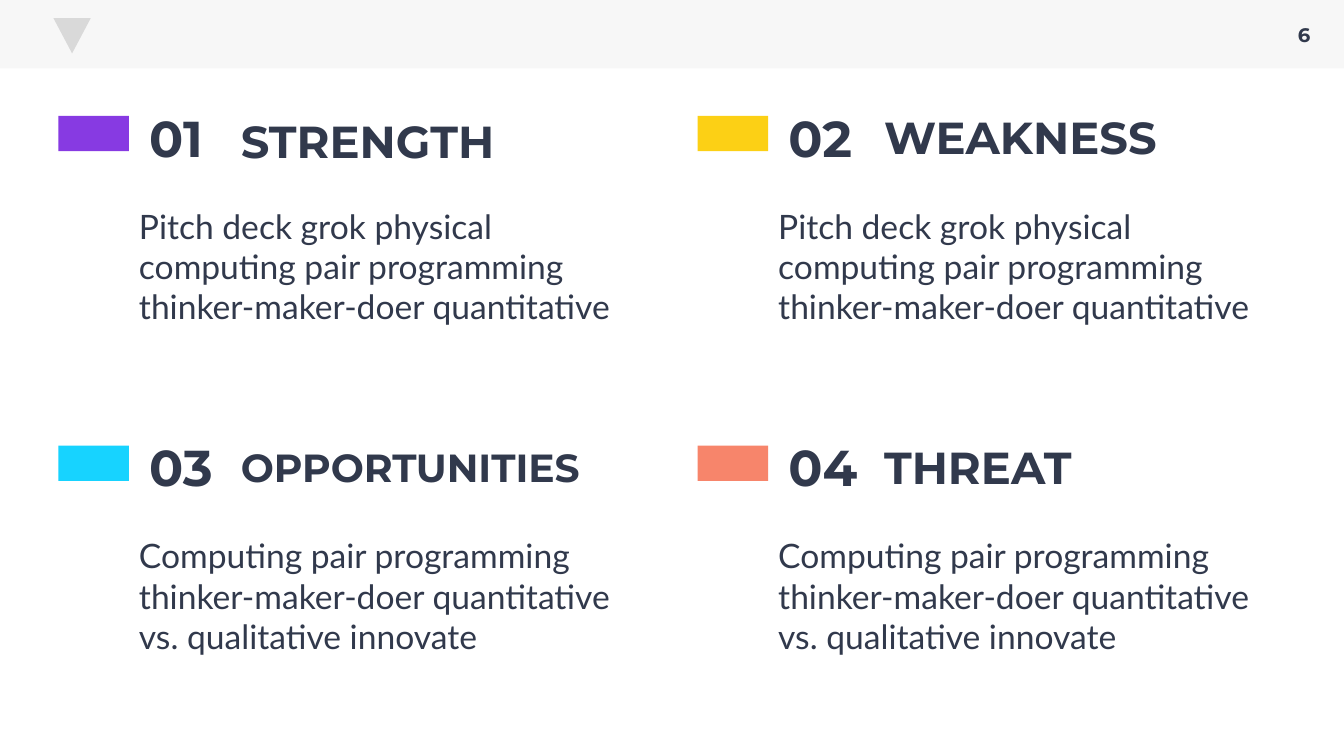
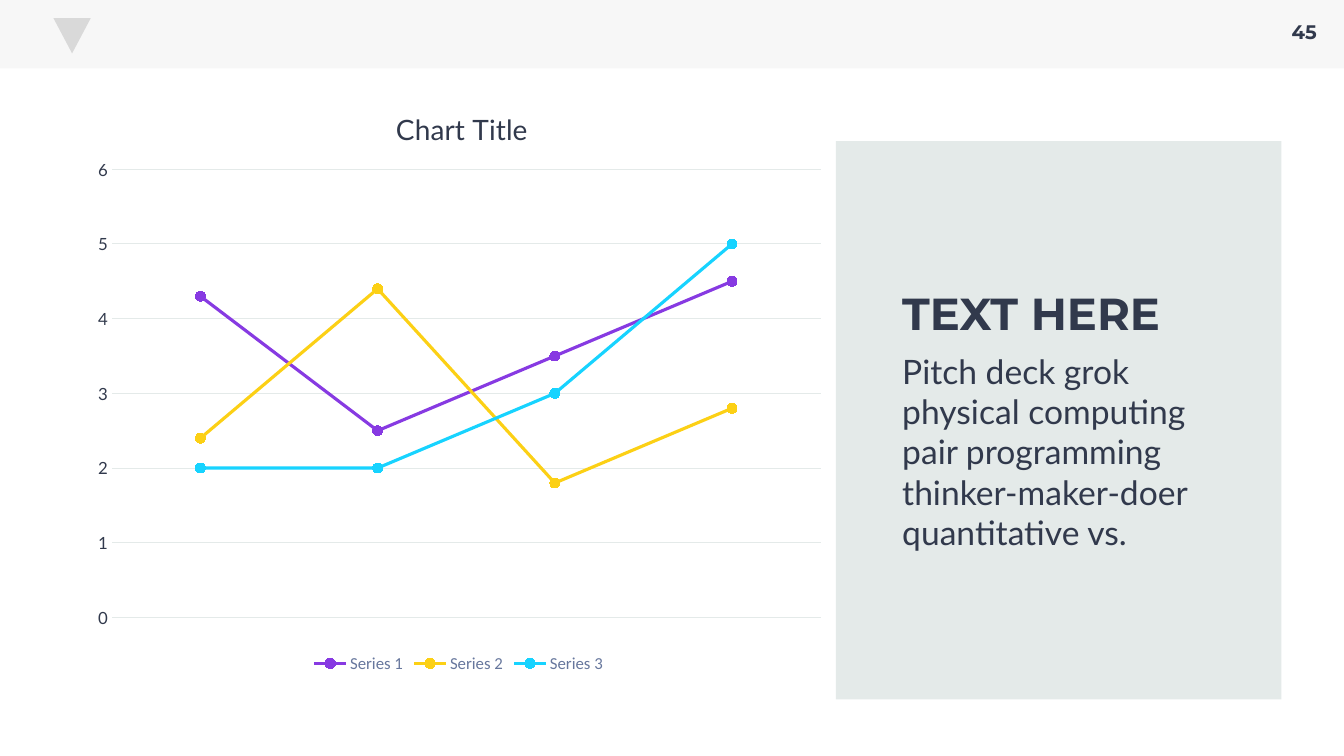
from dataclasses import dataclass

from lxml.etree import SubElement
from pptx import Presentation
from pptx.chart.data import CategoryChartData
from pptx.dml.color import RGBColor
from pptx.enum.chart import XL_CHART_TYPE, XL_LEGEND_POSITION, XL_MARKER_STYLE, XL_TICK_MARK
from pptx.enum.shapes import MSO_SHAPE
from pptx.enum.text import PP_ALIGN
from pptx.oxml.ns import qn
from pptx.util import Inches, Pt

# Shared style
NAVY = RGBColor(0x31, 0x39, 0x4C)
SLATE = RGBColor(0x67, 0x77, 0x9D)
BAND = RGBColor(0xF7, 0xF7, 0xF7)
EMBLEM = RGBColor(0xD9, 0xD9, 0xD9)
MIST = RGBColor(0xE4, 0xEA, 0xE9)
PURPLE = RGBColor(0x87, 0x3A, 0xE2)
YELLOW = RGBColor(0xFC, 0xD0, 0x15)
CYAN = RGBColor(0x17, 0xD3, 0xFF)
CORAL = RGBColor(0xF7, 0x85, 0x6B)
HEADING_FONT = "Montserrat"
BODY_FONT = "Lato"
LEGEND_FONT = "Calibri"


@dataclass(frozen=True)
class Column:
    left: float
    heading_dx: float
    heading_dy: float


@dataclass(frozen=True)
class Topic:
    number: str
    heading: str
    body: str
    color: RGBColor
    size: int = 32


@dataclass(frozen=True)
class Series:
    name: str
    values: tuple[float, ...]
    color: RGBColor


# Slide content
COLUMNS = (Column(0.58, 1.71, -0.07), Column(6.92, 1.75, -0.11))
ROW_TOPS = (1.15, 4.42)
PITCH = "Pitch deck grok physical computing pair programming thinker-maker-doer quantitative"
COMPUTING = ("Computing pair programming thinker-maker-doer quantitative "
             "vs. qualitative innovate")
TOPICS = (
    Topic("01", "STRENGTH", PITCH, PURPLE),
    Topic("02", "WEAKNESS", PITCH, YELLOW),
    Topic("03", "OPPORTUNITIES", COMPUTING, CYAN, size=28),
    Topic("04", "THREAT", COMPUTING, CORAL),
)
CATEGORIES = ("1", "2", "3", "4")
SERIES = (
    Series("Series 1", (4.3, 2.5, 3.5, 4.5), PURPLE),
    Series("Series 2", (2.4, 4.4, 1.8, 2.8), YELLOW),
    Series("Series 3", (2, 2, 3, 5), CYAN),
)


def style_font(font, name: str, size: float, color: RGBColor, bold: bool = False) -> None:
    font.name = name
    font.size = Pt(size)
    font.bold = bold
    font.color.rgb = color


def add_text(page, text: str, left: float, top: float, width: float, height: float, *,
             font: str = BODY_FONT, size: float = 24, bold: bool = False,
             color: RGBColor = NAVY, align: PP_ALIGN = PP_ALIGN.LEFT) -> None:
    box = page.shapes.add_textbox(Inches(left), Inches(top), Inches(width), Inches(height))
    box.text_frame.word_wrap = True
    para = box.text_frame.paragraphs[0]
    para.alignment = align
    span = para.add_run()
    span.text = text
    style_font(span.font, font, size, color, bold)


def add_heading(page, text: str, left: float, top: float, width: float, height: float,
                size: float = 32, align: PP_ALIGN = PP_ALIGN.LEFT) -> None:
    add_text(page, text, left, top, width, height,
             font=HEADING_FONT, size=size, bold=True, align=align)


def add_block(page, left: float, top: float, width: float, height: float,
              color: RGBColor, kind: MSO_SHAPE = MSO_SHAPE.RECTANGLE):
    block = page.shapes.add_shape(kind, Inches(left), Inches(top),
                                  Inches(width), Inches(height))
    block.shadow.inherit = False
    block.fill.solid()
    block.fill.fore_color.rgb = color
    block.line.fill.background()
    return block


def add_page(deck, number: str, number_top: float):
    """Add a blank page with the header band, emblem and page number."""
    page = deck.slides.add_slide(deck.slide_layouts[6])
    add_block(page, 0, 0, 13.33, 0.68, BAND)
    emblem = add_block(page, 0.53, 0.18, 0.37, 0.35, EMBLEM, MSO_SHAPE.ISOSCELES_TRIANGLE)
    emblem.rotation = 180
    add_heading(page, number, 12.7, number_top, 0.47, 0.29, size=14, align=PP_ALIGN.CENTER)
    return page


def add_topic(page, topic: Topic, column: Column, top: float) -> None:
    left = column.left
    add_block(page, left, top, 0.7, 0.35, topic.color)
    add_heading(page, topic.number, left + 0.8, top - 0.14, 1.15, 0.71, size=36)
    add_heading(page, topic.heading, left + column.heading_dx, top + column.heading_dy,
                3.69, 0.64, size=topic.size)
    add_text(page, topic.body, left + 0.7, top + 0.84, 5.19, 1.31)


def place_chart_part(part, index: int, **settings: str | float) -> None:
    """Give a chart part a manual layout, in fractions of the chart."""
    for old in part.findall(qn("c:layout")):
        part.remove(old)
    layout = SubElement(part, qn("c:layout"))
    part.insert(index, layout)
    manual = SubElement(layout, qn("c:manualLayout"))
    for name, value in settings.items():
        SubElement(manual, qn(f"c:{name}")).set("val", str(value))


def add_line_chart(page) -> None:
    data = CategoryChartData()
    data.categories = CATEGORIES
    for entry in SERIES:
        data.add_series(entry.name, entry.values)
    chart = page.shapes.add_chart(XL_CHART_TYPE.LINE_MARKERS, Inches(0.81), Inches(0.79),
                                  Inches(7.48), Inches(5.93), data).chart
    style_font(chart.font, LEGEND_FONT, 10, NAVY)

    # Title and legend
    chart.has_title = True
    title = chart.chart_title
    title.include_in_layout = False
    span = title.text_frame.paragraphs[0].add_run()
    span.text = "Chart Title"
    style_font(span.font, BODY_FONT, 20, NAVY)
    chart.has_legend = True
    chart.legend.position = XL_LEGEND_POSITION.BOTTOM
    chart.legend.include_in_layout = False
    style_font(chart.legend.font, LEGEND_FONT, 12, SLATE)

    # Axes
    chart.category_axis.visible = False
    axis = chart.value_axis
    axis.minimum_scale, axis.maximum_scale, axis.major_unit = 0, 6, 1
    axis.major_tick_mark = axis.minor_tick_mark = XL_TICK_MARK.NONE
    axis.format.line.fill.background()
    style_font(axis.tick_labels.font, BODY_FONT, 12, NAVY)
    axis.has_major_gridlines = True
    grid = axis.major_gridlines.format.line
    grid.color.rgb = MIST
    grid.width = Pt(0.75)

    # Series
    plot = chart.plots[0]
    plot.vary_by_categories = False
    for line, entry in zip(plot.series, SERIES):
        line.smooth = False
        line.format.line.color.rgb = entry.color
        line.format.line.width = Pt(2.25)
        marker = line.marker
        marker.style = XL_MARKER_STYLE.CIRCLE
        marker.size = 7
        marker.format.fill.solid()
        marker.format.fill.fore_color.rgb = entry.color
        marker.format.line.color.rgb = entry.color

    # Positions inside the chart
    title_part = chart.element.find(f".//{qn('c:title')}")
    plot_part = chart.element.find(f".//{qn('c:plotArea')}")
    place_chart_part(title_part, 1, xMode="edge", yMode="edge", x=0.41, y=0.04)
    place_chart_part(plot_part, 0, layoutTarget="inner", xMode="edge", yMode="edge",
                     x=0.04, y=0.15, w=0.94, h=0.75)


def build_swot(deck) -> None:
    page = add_page(deck, "6", 0.18)
    for index, topic in enumerate(TOPICS):
        row, column = divmod(index, len(COLUMNS))
        add_topic(page, topic, COLUMNS[column], ROW_TOPS[row])


def build_chart_page(deck) -> None:
    page = add_page(deck, "45", 0.15)
    add_line_chart(page)
    add_block(page, 8.29, 1.4, 4.42, 5.54, MIST)
    add_heading(page, "TEXT HERE", 8.85, 2.79, 2.86, 0.64)
    add_text(page, "Pitch deck grok physical computing pair programming "
             "thinker-maker-doer quantitative vs.", 8.85, 3.43, 3.29, 2.12)


def main() -> None:
    deck = Presentation()
    deck.slide_width = Inches(13.33)
    deck.slide_height = Inches(7.5)
    build_swot(deck)
    build_chart_page(deck)
    deck.save("out.pptx")


if __name__ == "__main__":
    main()
